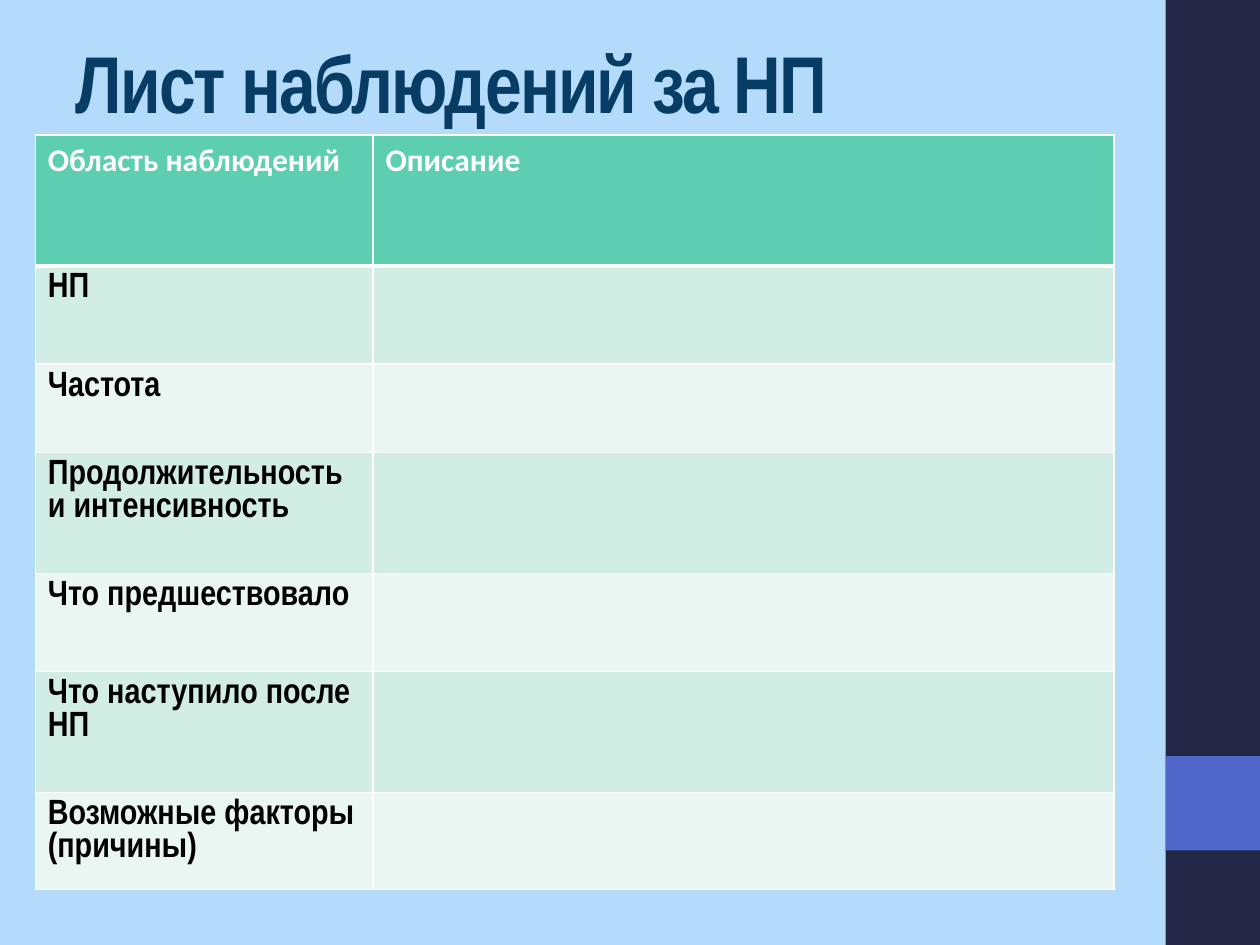
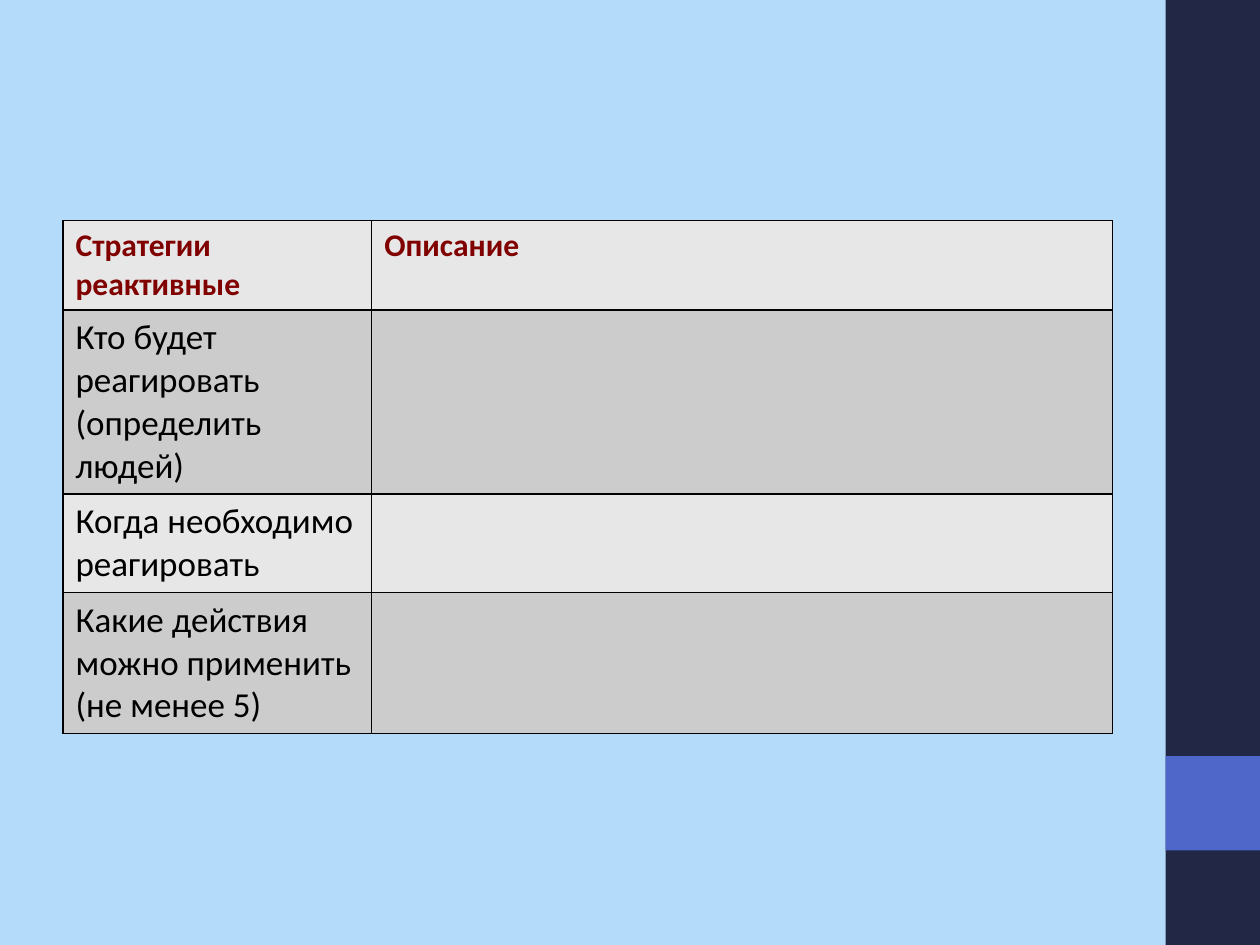
import pptx
import pptx.util
import pptx.dml.color
import pptx.enum.shapes
import pptx.enum.text
import pptx.oxml
import pptx.oxml.ns

SCALE = 9144
NARROW = "Arial Narrow"
PLAIN = "Calibri"
WHITE = "FFFFFF"
BLACK = "000000"
SKY = "B4DCFA"
NAVY = "212745"
BLUE = "4E67C8"
DEEP = "073C65"


def px(size):
    return pptx.util.Emu(size * SCALE)


def paint(fill, tint):
    fill.solid()
    fill.fore_color.rgb = pptx.dml.color.RGBColor.from_string(tint)


class Deck:
    def __init__(self):
        self.file = pptx.Presentation()
        self.file.slide_width = px(1000)
        self.file.slide_height = px(750)
        paint(self.file.slide_master.background.fill, SKY)
        self.slide = None

    def page(self, title=None):
        layout = self.file.slide_layouts[5 if title else 6]
        self.slide = self.file.slides.add_slide(layout)
        self.band(0, 750, NAVY)
        self.band(600, 75, BLUE)
        if title:
            self.title(title)

    def band(self, top, height, tint):
        shape = self.slide.shapes.add_shape(
            pptx.enum.shapes.MSO_SHAPE.RECTANGLE,
            px(925), px(top), px(75), px(height))
        shape.shadow.inherit = False
        paint(shape.fill, tint)
        shape.line.fill.background()

    def title(self, text):
        shape = self.slide.shapes.title
        shape.left, shape.top = px(50), px(30)
        shape.width, shape.height = px(833), px(69)
        frame = shape.text_frame
        frame.auto_size = pptx.enum.text.MSO_AUTO_SIZE.NONE
        frame.vertical_anchor = pptx.enum.text.MSO_ANCHOR.MIDDLE
        para = frame.paragraphs[0]
        para.alignment = pptx.enum.text.PP_ALIGN.LEFT
        run = self.text(para, text, NARROW, 46, DEEP, True)
        run.font._element.set("spc", "-100")

    def text(self, para, text, face, size, tint, bold):
        run = para.add_run()
        run.text = text
        run.font.name = face
        run.font.size = pptx.util.Pt(size)
        run.font.bold = bold
        paint(run.font.fill, tint)
        return run

    def edges(self, cell, tint, top=1, base=1):
        props = cell._tc.get_or_add_tcPr()
        sides = {"L": 1, "R": 1, "T": top, "B": base}
        for spot, (side, width) in enumerate(sides.items()):
            props.insert(spot, pptx.oxml.parse_xml(
                f'<a:ln{side} {pptx.oxml.ns.nsdecls("a")} w="{width * 12700}">'
                f'<a:solidFill><a:srgbClr val="{tint}"/></a:solidFill>'
                f'</a:ln{side}>'))

    def table(self, left, top, widths, heights, labels, head, body,
              fills, edge, rule=1):
        grid = self.slide.shapes.add_table(
            len(heights), len(widths), px(left), px(top),
            px(sum(widths)), px(sum(heights))).table
        for col, width in zip(grid.columns, widths):
            col.width = px(width)
        for row, height in zip(grid.rows, heights):
            row.height = px(height)
        for r, row in enumerate(grid.rows):
            fill = fills[0] if r == 0 else fills[1 + (r - 1) % 2]
            for cell in row.cells:
                paint(cell.fill, fill)
                self.edges(cell, edge, rule if r == 1 else 1,
                           rule if r == 0 else 1)
            self.text(row.cells[0].text_frame.paragraphs[0], labels[r],
                      *(body if r else head))
        self.text(grid.cell(0, 1).text_frame.paragraphs[0], "Описание", *head)


def main():
    deck = Deck()
    deck.page("Лист наблюдений за НП")
    deck.table(
        28, 107, [268, 588], [104, 78, 70, 96, 78, 96, 77],
        ["Область наблюдений", "НП", "Частота",
         "Продолжительность и интенсивность", "Что предшествовало",
         "Что наступило после НП", "Возможные факторы (причины)"],
        (PLAIN, 18, WHITE, True), (NARROW, 20, BLACK, True),
        ["5DCEAF", "D2EDE3", "EAF6F2"], WHITE, rule=3)
    deck.page()
    deck.table(
        50, 175, [245, 588], [71, 146, 78, 112],
        ["Стратегии реактивные", "Кто будет реагировать (определить людей)",
         "Когда необходимо реагировать",
         "Какие действия можно применить (не менее 5)"],
        (PLAIN, 18, "800000", True), (PLAIN, 20, BLACK, False),
        ["E7E7E7", "CCCCCC", "E7E7E7"], BLACK)
    deck.file.save("out.pptx")


if __name__ == "__main__":
    main()
